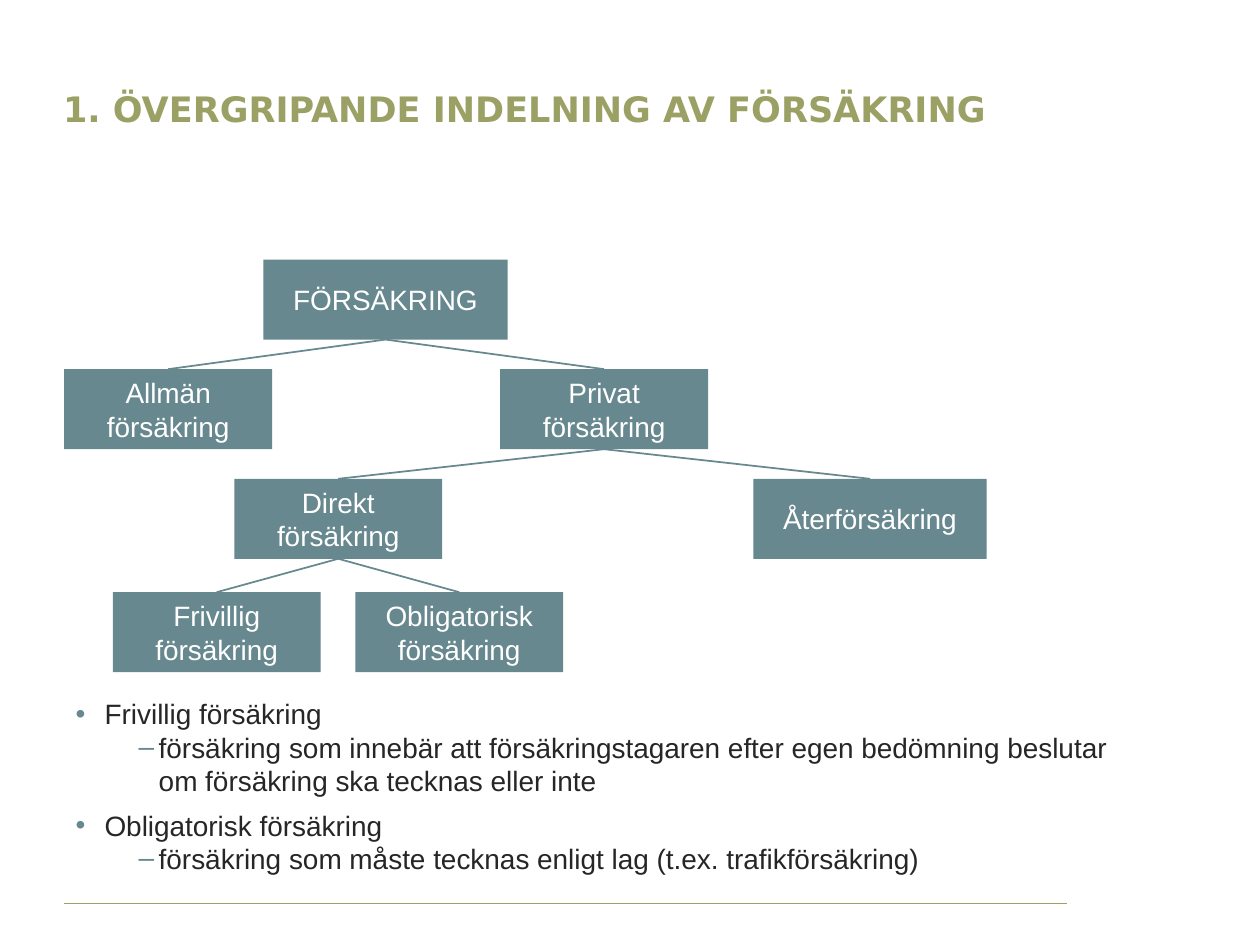
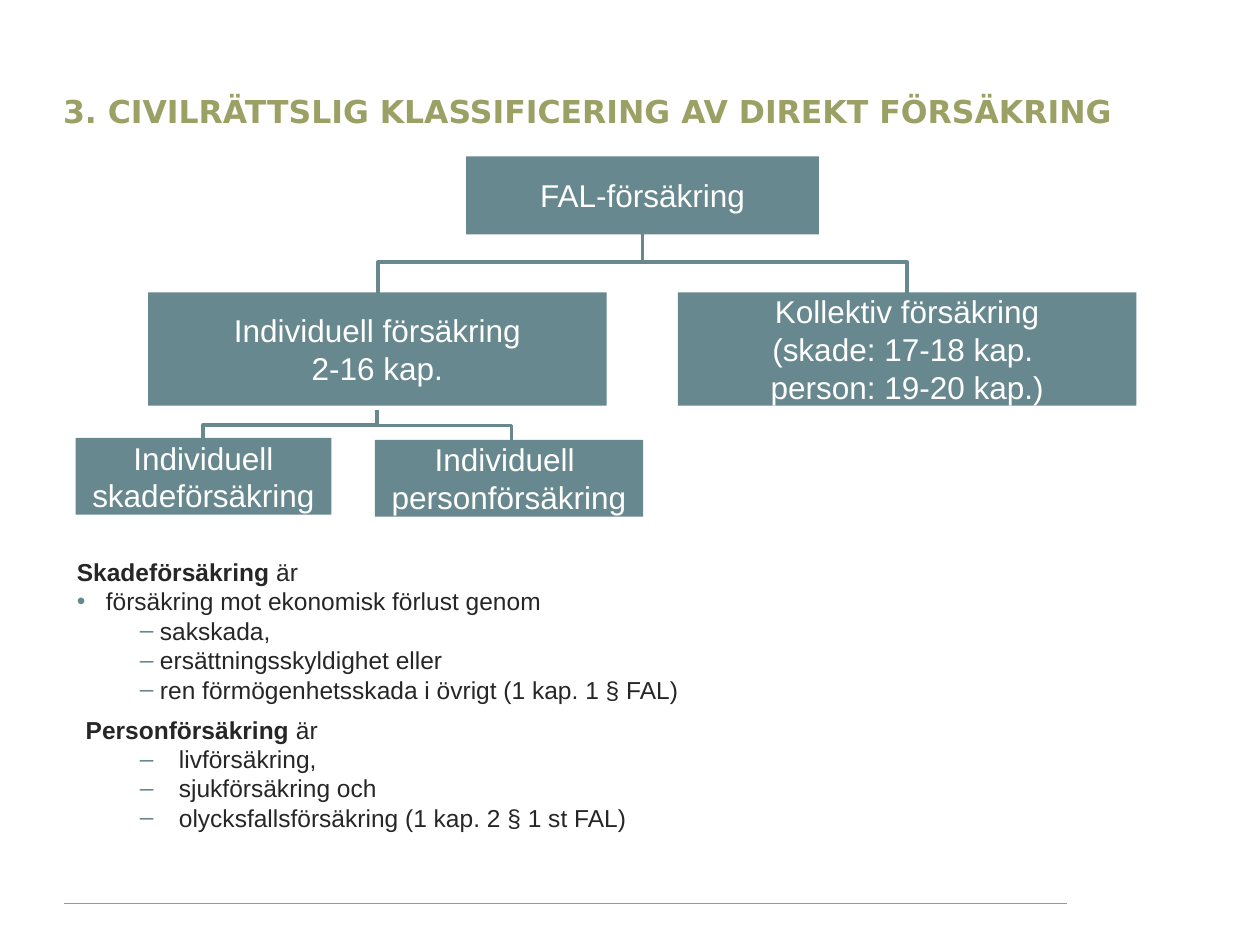
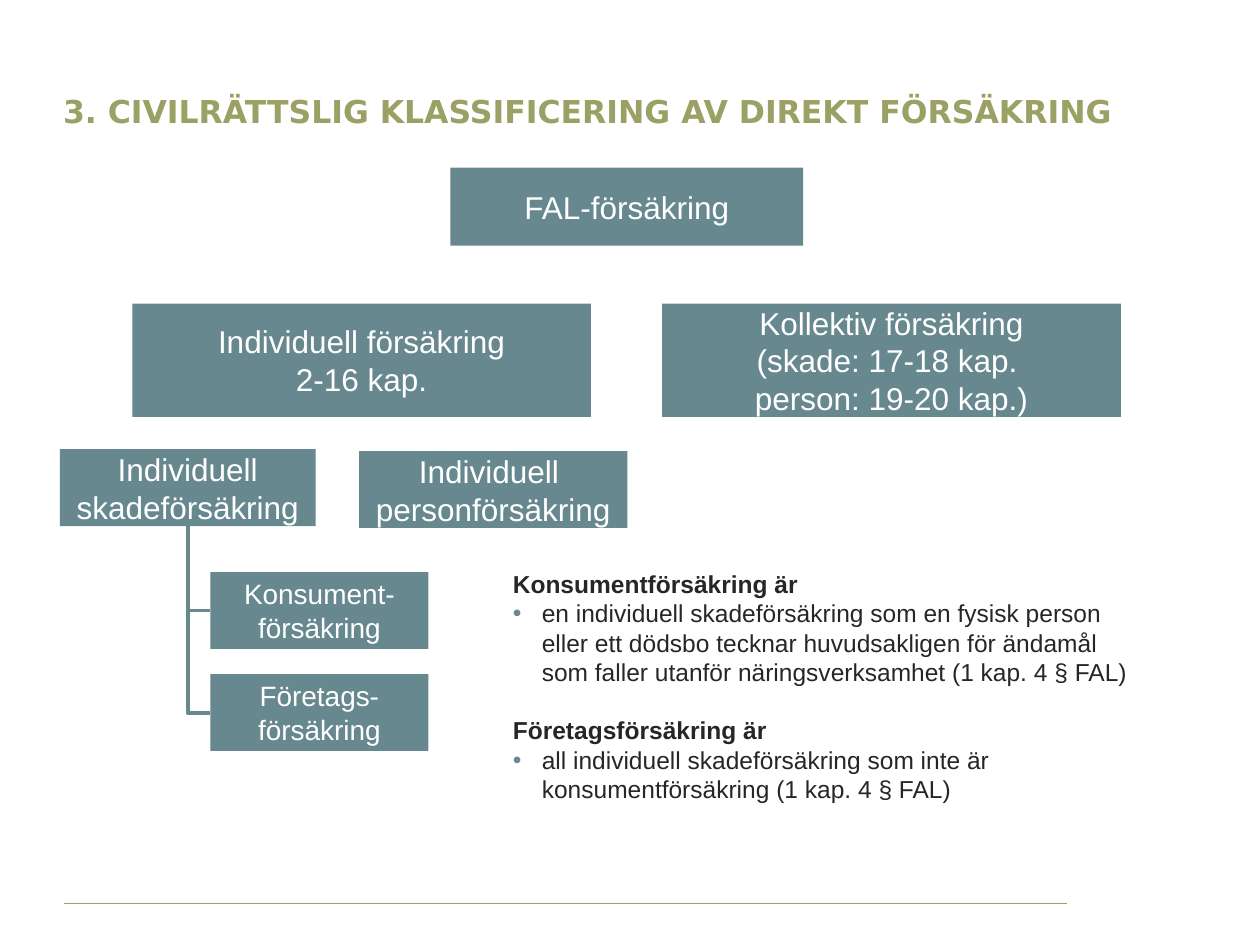
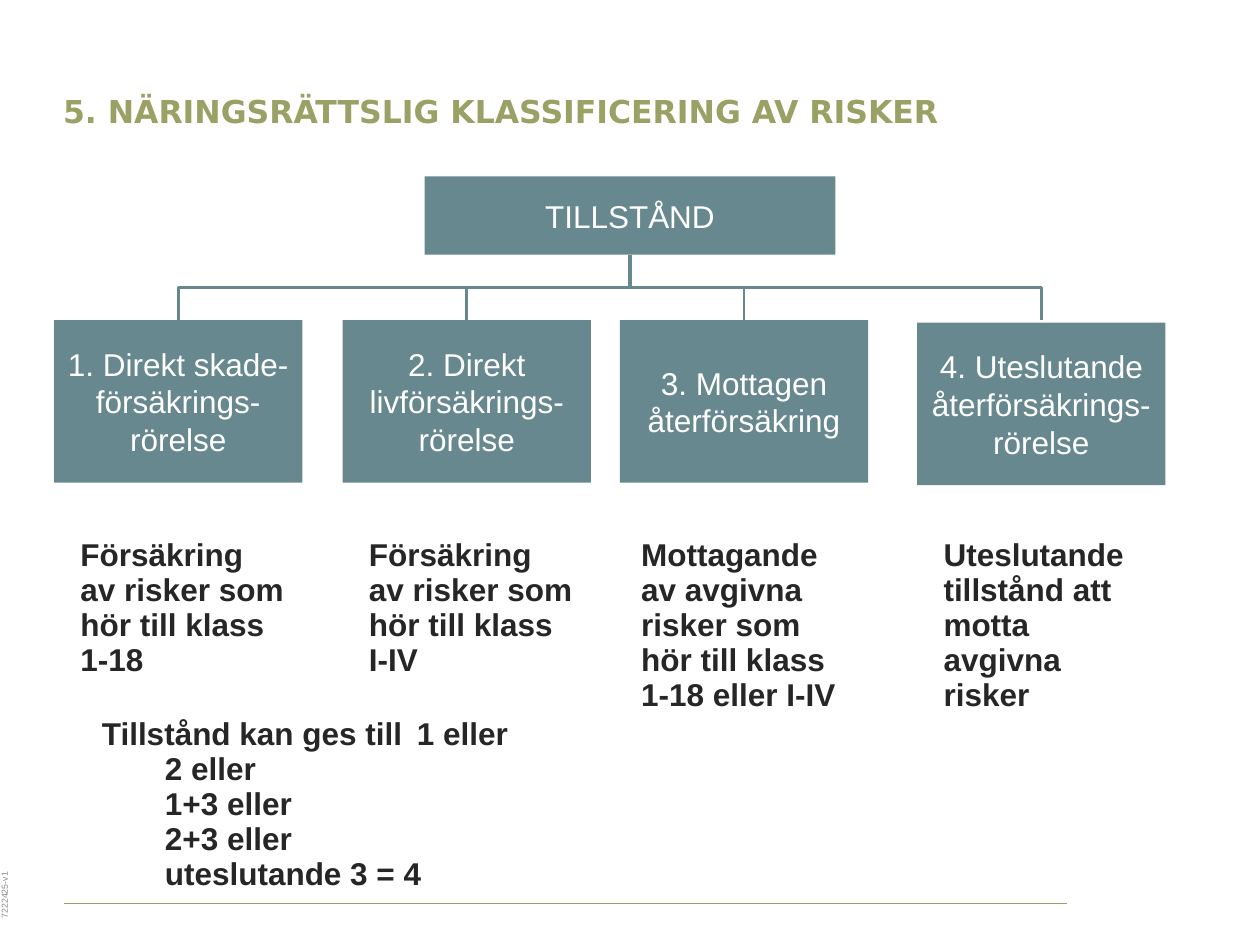
from dataclasses import dataclass
from typing import NamedTuple

from lxml.etree import SubElement
from pptx import Presentation
from pptx.dml.color import RGBColor
from pptx.enum.shapes import MSO_CONNECTOR as Connector, MSO_SHAPE as Preset
from pptx.enum.text import MSO_ANCHOR as Anchor, MSO_AUTO_SIZE as AutoSize, PP_ALIGN as Align
from pptx.oxml.ns import qn
from pptx.util import Inches, Pt

# Grid: 100 columns by 75 rows of square cells
COLUMNS, ROWS = 100, 75
SLIDE_WIDTH, SLIDE_HEIGHT = Inches(10), Inches(7.5)
CELL = SLIDE_WIDTH // COLUMNS

# Shared look
OLIVE = RGBColor(0x9B, 0xA0, 0x64)
TEAL = RGBColor(0x67, 0x88, 0x8E)
INK = RGBColor(0x26, 0x26, 0x26)
GREY = RGBColor(0x89, 0x89, 0x89)
WHITE = RGBColor(0xFF, 0xFF, 0xFF)
BODY_FONT, TITLE_FONT = "Arial", "DejaVu Sans"
CONTENT_LAYOUT, TITLE_LAYOUT = 1, 5


class Point(NamedTuple):
    column: float
    row: float


@dataclass(frozen=True)
class Area:
    """A rectangle in grid cells."""
    left: float
    top: float
    width: float
    height: float

    @property
    def top_centre(self) -> Point:
        return Point(self.left + self.width / 2, self.top)

    @property
    def bottom_centre(self) -> Point:
        return Point(self.left + self.width / 2, self.top + self.height)

    def lengths(self) -> tuple[int, ...]:
        return tuple(map(cells, (self.left, self.top, self.width, self.height)))


class Indent(NamedTuple):
    """Left margin and hanging indent in inches, with an optional bullet."""
    margin: float = 0
    hanging: float = 0
    bullet: str = ""
    level: int = 0
    tab: float = 0


PLAIN = Indent()
INSET = Indent(0.07)
TABBED = Indent(0.07, tab=3.07)
DOT = Indent(0.23, 0.23, "•")
DASH = Indent(0.66, 0.16, "–", 1)
WIDE_DASH = Indent(0.81, 0.31, "–", 1)


@dataclass(frozen=True)
class Line:
    text: str
    indent: Indent = PLAIN
    lead: str = ""
    bold: bool = False
    before: float = 0


@dataclass(frozen=True)
class Box:
    text: str
    area: Area


def cells(count: float) -> int:
    return round(count * CELL)


# Text
def set_font(paragraph, size: float, colour: RGBColor, bold: bool = False,
             name: str = BODY_FONT) -> None:
    font = paragraph.font
    font.name, font.size, font.bold = name, Pt(size), bold
    font.color.rgb = colour


def set_indent(paragraph, indent: Indent) -> None:
    paragraph.level = indent.level
    properties = paragraph._p.get_or_add_pPr()
    properties.set("marL", str(Inches(indent.margin)))
    properties.set("indent", str(-Inches(indent.hanging)))
    if indent.bullet:
        colour = SubElement(properties, qn("a:buClr"))
        SubElement(colour, qn("a:srgbClr"), val=str(TEAL))
        SubElement(properties, qn("a:buFont"), typeface=BODY_FONT)
        SubElement(properties, qn("a:buChar"), char=indent.bullet)
    else:
        SubElement(properties, qn("a:buNone"))
    if indent.tab:
        tabs = SubElement(properties, qn("a:tabLst"))
        SubElement(tabs, qn("a:tab"), pos=str(Inches(indent.tab)), algn="l")


def write_lines(shape, lines: list[Line], size: float, spacing=1.0) -> None:
    frame = shape.text_frame
    frame.word_wrap = True
    frame.auto_size = AutoSize.NONE
    frame.vertical_anchor = Anchor.TOP
    for index, line in enumerate(lines):
        paragraph = frame.add_paragraph() if index else frame.paragraphs[0]
        set_indent(paragraph, line.indent)
        paragraph.alignment = Align.LEFT
        paragraph.line_spacing = spacing
        paragraph.space_before = Pt(line.before)
        set_font(paragraph, size, INK, line.bold)
        if line.lead:
            lead = paragraph.add_run()
            lead.text, lead.font.bold = line.lead, True
        paragraph.add_run().text = line.text


def place(shape, area: Area) -> None:
    shape.left, shape.top, shape.width, shape.height = area.lengths()


def add_text(slide, area: Area, lines: list[Line], size: float, spacing) -> None:
    write_lines(slide.shapes.add_textbox(*area.lengths()), lines, size, spacing)


def fill_body(slide, area: Area, lines: list[Line], size: float) -> None:
    body = slide.placeholders[1]
    place(body, area)
    write_lines(body, lines, size)


# Boxes and lines
def add_box(slide, box: Box, size: float, preset=Preset.ROUNDED_RECTANGLE) -> None:
    shape = slide.shapes.add_shape(preset, *box.area.lengths())
    if preset == Preset.ROUNDED_RECTANGLE:
        shape.adjustments[0] = 0
    shape.shadow.inherit = False
    shape.fill.solid()
    shape.fill.fore_color.rgb = TEAL
    shape.line.fill.background()
    frame = shape.text_frame
    frame.word_wrap = True
    frame.vertical_anchor = Anchor.MIDDLE
    frame.text = box.text
    for paragraph in frame.paragraphs:
        paragraph.alignment = Align.CENTER
        set_font(paragraph, size, WHITE)


def add_line(slide, start: Point, end: Point, weight: float,
             colour: RGBColor = TEAL, kind=Connector.STRAIGHT):
    line = slide.shapes.add_connector(kind, *map(cells, (*start, *end)))
    line.line.color.rgb = colour
    line.line.width = Pt(weight)
    SubElement(line.element.spPr, qn("a:effectLst"))
    return line


def add_elbow(slide, start: Point, end: Point, preset: str = "bentConnector3") -> None:
    """Elbow that leaves start downwards: a level one turned a quarter."""
    middle = Point((start.column + end.column) / 2, (start.row + end.row) / 2)
    half_run, half_drop = abs(end.column - start.column) / 2, (end.row - start.row) / 2
    elbow = add_line(slide, Point(middle.column - half_drop, middle.row - half_run),
                     Point(middle.column + half_drop, middle.row + half_run),
                     2, kind=Connector.ELBOW)
    properties = elbow.element.spPr
    properties.find(qn("a:prstGeom")).set("prst", preset)
    goes_right = end.column > start.column
    properties.xfrm.flipH = goes_right
    properties.xfrm.rot = 270.0 if goes_right else 90.0


# Slide frame
def add_slide(presentation, layout: int, title: str, size: float = 18):
    slide = presentation.slides.add_slide(presentation.slide_layouts[layout])
    shape = slide.shapes.title
    place(shape, Area(5, 3.7, 89.8, 7.1))
    frame = shape.text_frame
    frame.margin_left = frame.margin_right = 0
    frame.vertical_anchor = Anchor.BOTTOM
    frame.auto_size = AutoSize.NONE
    frame.word_wrap = True
    frame.text = title
    frame.paragraphs[0].alignment = Align.LEFT
    set_font(frame.paragraphs[0], size, OLIVE, True, TITLE_FONT)
    return slide


def add_footer_rule(presentation, slide) -> None:
    """Draw the rule and move it to the master, so every slide shows it."""
    rule = add_line(slide, Point(5.1, 71.7), Point(84.7, 71.7), 0.75, OLIVE)
    presentation.slide_master.shapes.element.append(rule.element)


# Slide 1: overall division
def build_overview(presentation) -> None:
    slide = add_slide(presentation, CONTENT_LAYOUT,
                      "1. ÖVERGRIPANDE INDELNING AV FÖRSÄKRING", 20)
    add_footer_rule(presentation, slide)
    height, width = 6.35, 16.5
    tiers = (20.6, 29.3, 38, 47)
    boxes = {
        "all": Box("FÖRSÄKRING", Area(20.9, tiers[0], 19.4, height)),
        "public": Box("Allmän försäkring", Area(5.1, tiers[1], width, height)),
        "direct": Box("Direkt försäkring", Area(18.6, tiers[2], width, height)),
        "private": Box("Privat försäkring", Area(39.7, tiers[1], width, height)),
        "reinsurance": Box("Återförsäkring", Area(59.8, tiers[2], 18.5, height)),
        "voluntary": Box("Frivillig försäkring", Area(8.95, tiers[3], width, height)),
        "mandatory": Box("Obligatorisk försäkring", Area(28.2, tiers[3], width, height)),
    }
    children = {
        "all": ("public", "private"),
        "private": ("direct", "reinsurance"),
        "direct": ("voluntary", "mandatory"),
    }
    for box in boxes.values():
        add_box(slide, box, 16, Preset.RECTANGLE)
    for parent, names in children.items():
        for name in names:
            add_line(slide, boxes[parent].area.bottom_centre,
                     boxes[name].area.top_centre, 1)
    fill_body(slide, Area(5, 54.8, 87.5, 14.7), [
        Line("Frivillig försäkring", DOT),
        Line("försäkring som innebär att försäkringstagaren efter egen bedömning "
             "beslutar om försäkring ska tecknas eller inte", DASH),
        Line("Obligatorisk försäkring", DOT, before=6),
        Line("försäkring som måste tecknas enligt lag (t.ex. trafikförsäkring)", DASH),
    ], 16)


# Slides 2 and 3: the same five boxes at two places
CIVIL_TITLE = "3. CIVILRÄTTSLIG KLASSIFICERING AV DIREKT FÖRSÄKRING"


def add_civil_boxes(slide, left: float, top: float) -> None:
    boxes = (
        Box("FAL-försäkring", Area(left + 31, top, 28, 6.2)),
        Box("Kollektiv försäkring\n(skade: 17-18 kap. \vperson: 19-20 kap.)",
            Area(left + 47.8, top + 10.8, 36.4, 9)),
        Box("Individuell skadeförsäkring", Area(left, top + 22.35, 20.3, 6.1)),
        Box("Individuell \vpersonförsäkring", Area(left + 23.75, top + 22.5, 21.3, 6.1)),
        Box("Individuell försäkring\n2-16 kap.", Area(left + 5.75, top + 10.8, 36.4, 9)),
    )
    for box in boxes:
        add_box(slide, box, 18)


def build_civil_classes(presentation) -> None:
    slide = add_slide(presentation, CONTENT_LAYOUT, CIVIL_TITLE)
    fill_body(slide, Area(5.1, 43.7, 87.5, 23.4), [
        Line("är", lead="Skadeförsäkring "),
        Line("försäkring mot ekonomisk förlust genom", DOT),
        Line("sakskada,", DASH),
        Line("ersättningsskyldighet eller", DASH),
        Line("ren förmögenhetsskada i övrigt (1 kap. 1 § FAL)", DASH),
        Line("är", INSET, lead="Personförsäkring ", before=6),
        Line("livförsäkring,", WIDE_DASH),
        Line("sjukförsäkring och", WIDE_DASH),
        Line("olycksfallsförsäkring (1 kap. 2 § 1 st FAL)", WIDE_DASH),
    ], 14)
    upper, lower = Point(51, 18.2), Point(29.9, 32.55)
    for start, end in ((upper, Point(72, 23.4)), (upper, Point(30, 23.4)),
                       (lower, Point(40.6, 35)), (lower, Point(16.1, 34.9))):
        add_elbow(slide, start, end)
    add_civil_boxes(slide, 6, 12.4)


def build_consumer_classes(presentation) -> None:
    slide = add_slide(presentation, CONTENT_LAYOUT, CIVIL_TITLE)
    fill_body(slide, Area(39.7, 44.65, 50.9, 23.4), [
        Line("Konsumentförsäkring är", bold=True),
        Line("en individuell skadeförsäkring som en fysisk person eller ett dödsbo "
             "tecknar huvudsakligen för ändamål som faller utanför näringsverksamhet "
             "(1 kap. 4 § FAL)", DOT),
        Line("Företagsförsäkring är", bold=True, before=16.5),
        Line("all individuell skadeförsäkring som inte är konsumentförsäkring "
             "(1 kap. 4 § FAL)", DOT),
    ], 14)
    add_civil_boxes(slide, 4.75, 13.3)
    for text, top in (("Konsument-försäkring", 45.4), ("Företags-försäkring", 53.5)):
        add_box(slide, Box(text, Area(16.7, top, 17.3, 6.1)), 16)
    add_elbow(slide, Point(14.9, 41.7), Point(16.7, 56.6), "bentConnector2")
    add_line(slide, Point(14.9, 48.45), Point(16.7, 48.45), 2)


# Slide 4: licences
class Licence(NamedTuple):
    name: str
    scope: str
    left: float
    top: float
    text_left: float


LICENCES = (
    Licence("1. Direkt skade-försäkrings-rörelse",
            "Försäkring av risker som hör till klass 1-18", 4.3, 25.4, 4.7),
    Licence("2. Direkt livförsäkrings-rörelse",
            "Försäkring av risker som hör till klass I-IV", 27.2, 25.4, 27.6),
    Licence("3. Mottagen återförsäkring",
            "Mottagande av avgivna risker som hör till klass 1-18 eller I-IV",
            49.2, 25.4, 49.2),
    Licence("4. Uteslutande återförsäkrings-rörelse",
            "Uteslutande tillstånd att motta avgivna risker", 72.8, 25.6, 73.2),
)


def add_document_number(slide) -> None:
    shape = slide.shapes.add_textbox(*Area(0, 68.7, 1.8, 6.3).lengths())
    frame = shape.text_frame
    frame.word_wrap = False
    frame.auto_size = AutoSize.SHAPE_TO_FIT_TEXT
    frame.margin_left, frame.margin_top = 0, Inches(0.05)
    frame.margin_right, frame.margin_bottom = Inches(0.1), Inches(0.21)
    frame._txBody.bodyPr.set("vert", "vert270")
    frame.text = "7222425-v1"
    frame.paragraphs[0].line_spacing = 0.95
    set_font(frame.paragraphs[0], 5, GREY)


def build_licences(presentation) -> None:
    slide = add_slide(presentation, TITLE_LAYOUT,
                      "5. NÄRINGSRÄTTSLIG KLASSIFICERING AV RISKER")
    permit = Box("TILLSTÅND", Area(33.7, 14, 32.6, 6.2))
    add_box(slide, permit, 18)
    bar_row, branch_row = 22.8, 25.4
    for licence in LICENCES:
        area = Area(licence.left, licence.top, 19.7, 12.9)
        add_box(slide, Box(licence.name, area), 18)
        branch = Point(area.top_centre.column, branch_row)
        if licence in (LICENCES[0], LICENCES[-1]):
            add_elbow(slide, permit.area.bottom_centre, branch)
        else:
            add_line(slide, Point(branch.column, bar_row), branch, 1.5)
        add_text(slide, Area(licence.text_left, 42.2, 18.9, 22),
                 [Line(licence.scope, INSET, bold=True)], 18, Pt(20))
    add_document_number(slide)
    choices = ("1 eller", "2 eller", "1+3 eller", "2+3 eller", "uteslutande 3 = 4")
    add_text(slide, Area(6.4, 56.4, 88.5, 15.5), [
        Line(("" if index else "Tillstånd kan ges till") + "\t" + choice, TABBED, bold=True)
        for index, choice in enumerate(choices)
    ], 18, Pt(20))


def main() -> None:
    presentation = Presentation()
    presentation.slide_width, presentation.slide_height = SLIDE_WIDTH, SLIDE_HEIGHT
    for build in (build_overview, build_civil_classes,
                  build_consumer_classes, build_licences):
        build(presentation)
    presentation.save("out.pptx")


if __name__ == "__main__":
    main()
